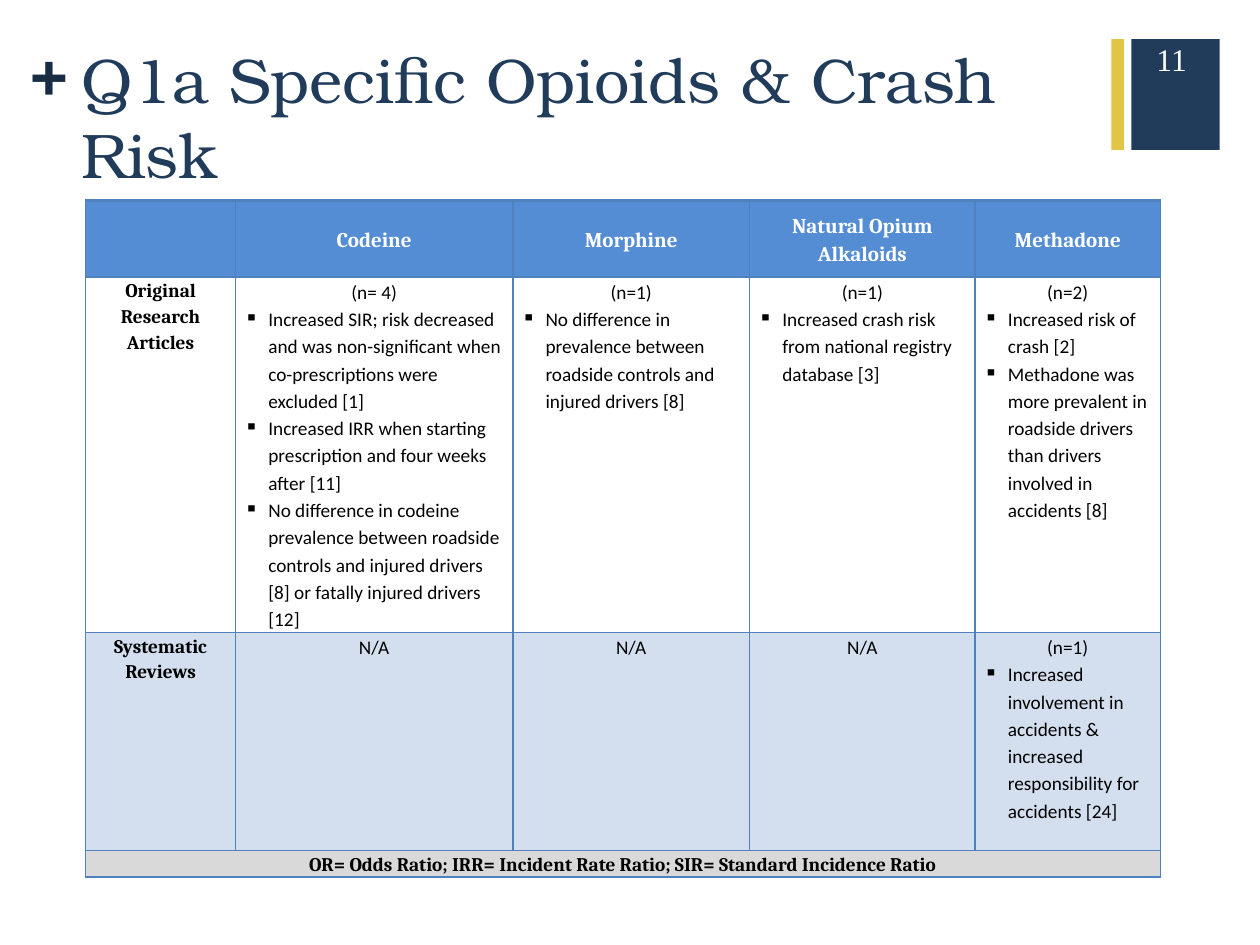
from dataclasses import dataclass

from lxml import etree
from pptx import Presentation
from pptx.dml.color import RGBColor
from pptx.enum.shapes import MSO_SHAPE
from pptx.enum.text import MSO_ANCHOR, PP_ALIGN
from pptx.oxml.ns import qn
from pptx.util import Inches, Pt

RECT = MSO_SHAPE.RECTANGLE
TOP, MIDDLE = MSO_ANCHOR.TOP, MSO_ANCHOR.MIDDLE
LEFT, CENTER = PP_ALIGN.LEFT, PP_ALIGN.CENTER


@dataclass(frozen=True)
class Theme:
    navy: str = "203C5A"
    dark: str = "182D44"
    gold: str = "E2C446"
    head: str = "548DD4"
    band: str = "D3DFEE"
    foot: str = "D9D9D9"
    edge: str = "4F81BD"
    white: str = "FFFFFF"
    black: str = "000000"
    serif: str = "TeX Gyre Bonum"
    label: str = "Cambria"
    body: str = "Calibri"
    number: str = "Times New Roman"
    title_size: float = 36
    number_size: float = 18
    head_size: float = 12
    body_size: float = 11
    thin: float = 1
    thick: float = 2.25


@dataclass(frozen=True)
class Box:
    left: float
    top: float
    width: float
    height: float

    def emu(self) -> tuple:
        return tuple(Inches(n) for n in (self.left, self.top, self.width, self.height))


@dataclass(frozen=True)
class Style:
    font: str
    size: float
    color: str
    bold: bool = False


@dataclass(frozen=True)
class Entry:
    lead: str
    points: tuple = ()


T = Theme()
HEAD = Style(T.label, T.head_size, T.white, True)
LABEL = Style(T.label, T.body_size, T.black, True)
BODY = Style(T.body, T.body_size, T.black)

COLS = (1.19, 2.2, 1.88, 1.79, 1.47)
ROWS = (0.61, 2.82, 1.73, 0.21)
FILLS = (T.head, None, T.band, T.foot)
NONE = Entry("N/A")
GRID = (
    (
        Entry(""),
        Entry("Codeine"),
        Entry("Morphine"),
        Entry("Natural Opium Alkaloids"),
        Entry("Methadone"),
    ),
    (
        Entry("Original Research Articles"),
        Entry("(n= 4)", (
            "Increased SIR; risk decreased and was non-significant when "
            "co-prescriptions were excluded [1]",
            "Increased IRR when starting prescription and four weeks after [11]",
            "No difference in codeine prevalence between roadside controls and "
            "injured drivers [8] or fatally injured drivers [12]",
        )),
        Entry("(n=1)", (
            "No difference in prevalence between roadside controls and "
            "injured drivers [8]",
        )),
        Entry("(n=1)", ("Increased crash risk from national registry database [3]",)),
        Entry("(n=2)", (
            "Increased risk of crash [2]",
            "Methadone was more prevalent in roadside drivers than drivers "
            "involved in accidents [8]",
        )),
    ),
    (
        Entry("Systematic Reviews"),
        NONE,
        NONE,
        NONE,
        Entry("(n=1)", (
            "Increased involvement in accidents & increased responsibility "
            "for accidents [24]",
        )),
    ),
    (Entry("OR= Odds Ratio; IRR= Incident Rate Ratio; SIR= Standard Incidence Ratio"),),
)


def paint(para, style: Style) -> None:
    for run in para.runs:
        run.font.name = style.font
        run.font.size = Pt(style.size)
        run.font.bold = style.bold
        run.font.color.rgb = RGBColor.from_string(style.color)


def add_text(slide, box: Box, text: str, style: Style, inset: float = 0.1) -> None:
    frame = slide.shapes.add_textbox(*box.emu()).text_frame
    frame.word_wrap = True
    frame.vertical_anchor = TOP
    frame.margin_left = frame.margin_right = Inches(inset)
    frame.margin_top = frame.margin_bottom = Inches(inset / 2)
    frame.text = text
    paint(frame.paragraphs[0], style)


def add_bar(slide, box: Box, color: str) -> None:
    bar = slide.shapes.add_shape(RECT, *box.emu())
    bar.shadow.inherit = False
    bar.fill.solid()
    bar.fill.fore_color.rgb = RGBColor.from_string(color)
    bar.line.fill.background()


def add_edges(cell, top: float) -> None:
    props = cell._tc.get_or_add_tcPr()
    for side in "LRTB":
        width = top if side == "T" else T.thin
        line = etree.SubElement(props, qn(f"a:ln{side}"), w=str(Pt(width)))
        fill = etree.SubElement(line, qn("a:solidFill"))
        etree.SubElement(fill, qn("a:srgbClr"), val=T.edge)


def add_bullet(para) -> None:
    props = para._p.get_or_add_pPr()
    props.set("marL", str(Inches(0.19)))
    props.set("indent", str(Inches(-0.19)))
    etree.SubElement(props, qn("a:buChar"), char="▪")


def fill_cell(cell, entry: Entry, style: Style, color: str | None) -> None:
    cell.margin_left = cell.margin_right = Inches(0.07)
    cell.margin_top = cell.margin_bottom = 0
    frame = cell.text_frame
    frame.text = "\n".join((entry.lead, *entry.points))
    for i, para in enumerate(frame.paragraphs):
        para.alignment = LEFT if i else CENTER
        para.line_spacing = 1.15
        if i:
            add_bullet(para)
        paint(para, style)
    if color:
        cell.fill.solid()
        cell.fill.fore_color.rgb = RGBColor.from_string(color)
    else:
        cell.fill.background()


def add_grid(slide, left: float, top: float) -> None:
    box = Box(left, top, sum(COLS), sum(ROWS))
    table = slide.shapes.add_table(len(ROWS), len(COLS), *box.emu()).table
    table.first_row = table.horz_banding = False
    for col, width in zip(table.columns, COLS):
        col.width = Inches(width)
    for row, height in zip(table.rows, ROWS):
        row.height = Inches(height)
    last = len(ROWS) - 1
    table.cell(last, 0).merge(table.cell(last, len(COLS) - 1))
    for r, color in enumerate(FILLS):
        for c in range(len(COLS)):
            cell = table.cell(r, c)
            add_edges(cell, T.thin if r else T.thick)
            entry = GRID[r][c] if c < len(GRID[r]) else Entry("")
            style = HEAD if r == 0 else LABEL if c == 0 else BODY
            fill_cell(cell, entry, style, color)
            cell.vertical_anchor = TOP if r else MIDDLE


def main() -> None:
    deck = Presentation()
    deck.slide_width, deck.slide_height = Inches(10), Inches(7.5)
    slide = deck.slides.add_slide(deck.slide_layouts[6])
    add_bar(slide, Box(8.98, 0.31, 0.7, 0.88), T.navy)
    add_text(slide, Box(0.24, 0.25, 0.28, 0.61), "+",
             Style(T.serif, T.title_size, T.dark, True), 0)
    add_bar(slide, Box(8.82, 0.31, 0.1, 0.88), T.gold)
    add_text(slide, Box(0.55, 0.27, 8.26, 0.65), "Q1a Specific Opioids & Crash Risk",
             Style(T.serif, T.title_size, T.navy))
    add_grid(slide, 0.68, 1.59)
    add_text(slide, Box(9.08, 0.27, 0.61, 0.4), "11",
             Style(T.number, T.number_size, T.white))
    deck.save("out.pptx")


if __name__ == "__main__":
    main()
